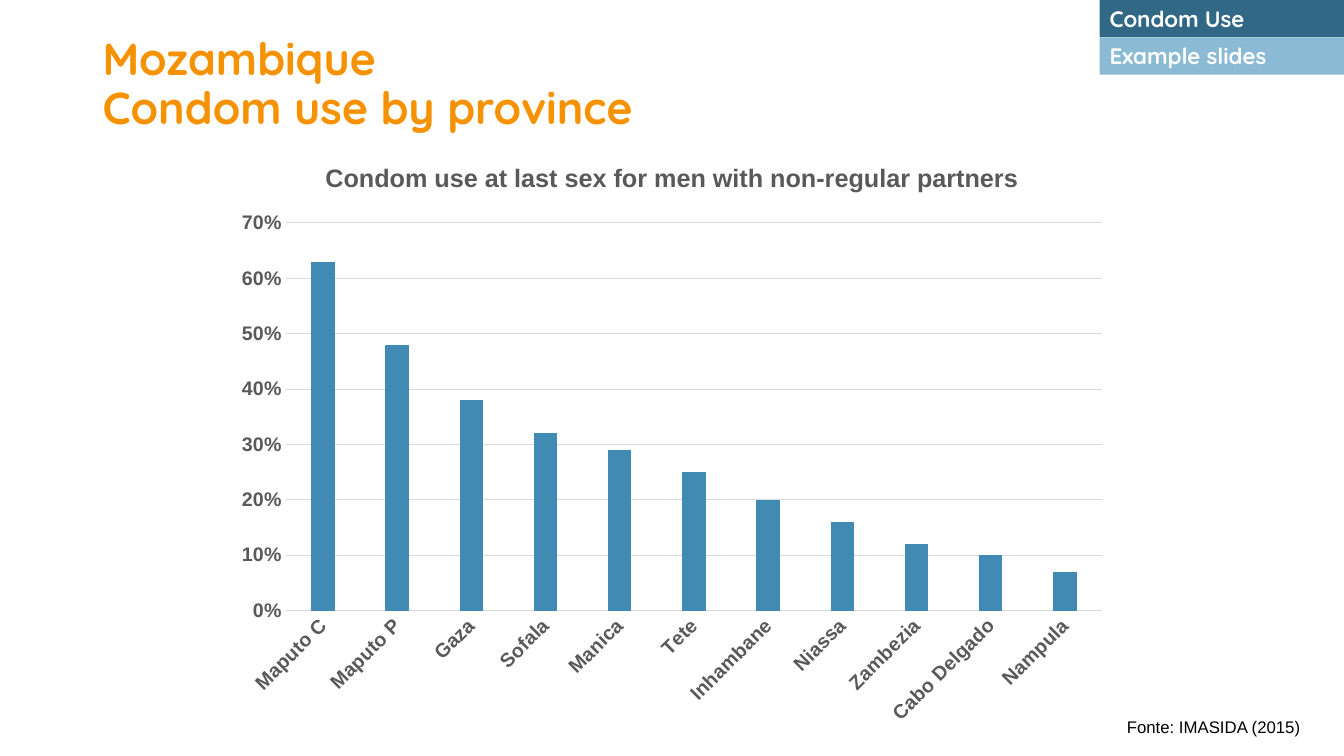
from pptx import Presentation
from pptx.chart.data import CategoryChartData
from pptx.dml.color import RGBColor
from pptx.enum.chart import XL_CHART_TYPE, XL_TICK_MARK
from pptx.enum.shapes import MSO_SHAPE
from pptx.enum.text import MSO_ANCHOR, PP_ALIGN
from pptx.util import Pt

COLUMNS = XL_CHART_TYPE.COLUMN_CLUSTERED
NO_TICK = XL_TICK_MARK.NONE
RECTANGLE = MSO_SHAPE.RECTANGLE
MIDDLE = MSO_ANCHOR.MIDDLE
TOP = MSO_ANCHOR.TOP
LEFT = PP_ALIGN.LEFT

CONDOM_USE = {
    "Maputo C": 0.63, "Maputo P": 0.48, "Gaza": 0.38, "Sofala": 0.32,
    "Manica": 0.29, "Tete": 0.25, "Inhambane": 0.2, "Niassa": 0.16,
    "Zambezia": 0.12, "Cabo Delgado": 0.1, "Nampula": 0.07,
}


def color(value):
    return RGBColor.from_string(value)


class ProvinceSlide:
    heading_font = "Quicksand"
    body_font = "Arial"
    orange = "F69200"
    bar_blue = "418AB3"
    gray = "595959"
    grid_gray = "D9D9D9"

    def __init__(self, deck):
        self.page = deck.slides.add_slide(deck.slide_layouts[6])

    def style_font(self, font, name, size, fill, bold=False):
        font.name = name
        font.size = Pt(size)
        font.bold = bold
        font.color.rgb = color(fill)

    def add_lines(self, frame, lines, name, size, fill, bold, spacing=1.0):
        for index, line in enumerate(lines):
            para = frame.add_paragraph() if index else frame.paragraphs[0]
            para.alignment = LEFT
            para.line_spacing = spacing
            span = para.add_run()
            span.text = line
            self.style_font(span.font, name, size, fill, bold)

    def title(self, lines, left, top, width, height):
        box = self.page.shapes.add_textbox(Pt(left), Pt(top), Pt(width), Pt(height))
        box.text_frame.word_wrap = True
        box.text_frame.vertical_anchor = MIDDLE
        self.add_lines(box.text_frame, lines, self.heading_font, 32, self.orange, True, 0.9)

    def source_note(self, text, left, top, width, height):
        box = self.page.shapes.add_textbox(Pt(left), Pt(top), Pt(width), Pt(height))
        box.text_frame.word_wrap = False
        box.text_frame.vertical_anchor = TOP
        self.add_lines(box.text_frame, [text], self.body_font, 12, "000000", False)

    def tag(self, text, fill, left, top, width, height):
        box = self.page.shapes.add_shape(RECTANGLE, Pt(left), Pt(top), Pt(width), Pt(height))
        box.shadow.inherit = False
        box.fill.solid()
        box.fill.fore_color.rgb = color(fill)
        box.line.fill.background()
        box.text_frame.word_wrap = True
        box.text_frame.vertical_anchor = MIDDLE
        self.add_lines(box.text_frame, [text], self.heading_font, 16, "FFFFFF", True)

    def thin_line(self, line):
        line.color.rgb = color(self.grid_gray)
        line.width = Pt(0.75)

    def column_chart(self, heading, values, left, top, width, height):
        data = CategoryChartData(number_format="0%")
        data.categories = list(values)
        data.add_series("Series 1", list(values.values()))
        chart = self.page.shapes.add_chart(
            COLUMNS, Pt(left), Pt(top), Pt(width), Pt(height), data).chart
        self.style_font(chart.font, self.body_font, 10, "000000")
        chart.has_legend = False

        # Chart heading
        chart.has_title = True
        chart.chart_title.include_in_layout = False
        span = chart.chart_title.text_frame.paragraphs[0].add_run()
        span.text = heading
        self.style_font(span.font, self.body_font, 18, self.gray, True)

        # Columns
        plot = chart.plots[0]
        plot.vary_by_categories = False
        plot.gap_width = 219
        plot.overlap = -27
        bars = plot.series[0].format
        bars.fill.solid()
        bars.fill.fore_color.rgb = color(self.bar_blue)

        # Axes
        for axis in (chart.category_axis, chart.value_axis):
            axis.major_tick_mark = NO_TICK
            axis.minor_tick_mark = NO_TICK
            self.style_font(axis.tick_labels.font, self.body_font, 14, self.gray, True)
        self.thin_line(chart.category_axis.format.line)
        labels = chart.category_axis._element.txPr
        labels.find("{*}bodyPr").set("rot", "-2700000")
        scale = chart.value_axis
        scale.minimum_scale, scale.maximum_scale, scale.major_unit = 0, 0.7, 0.1
        scale.tick_labels.number_format = "0%"
        scale.tick_labels.number_format_is_linked = False
        scale.format.line.fill.background()
        scale.has_major_gridlines = True
        self.thin_line(scale.major_gridlines.format.line)


def main():
    deck = Presentation()
    deck.slide_width, deck.slide_height = Pt(960), Pt(540)
    slide = ProvinceSlide(deck)

    # Chart and its source
    slide.column_chart("Condom use at last sex for men with non-regular partners",
                       CONDOM_USE, 160, 99.4, 640, 427)
    slide.source_note("Fonte: IMASIDA (2015)", 797.8, 508.3, 139.7, 21.6)

    # Title
    slide.title(["Mozambique", "Condom use by province"], 66.2, 23, 828, 76.3)

    # Corner tags
    tag_height = 26.64
    tags = [("Condom Use", "316886"), ("Example slides", "8ABAD4")]
    for row, (text, fill) in enumerate(tags):
        slide.tag(text, fill, 785.5, row * tag_height, 174.5, tag_height)

    deck.save("out.pptx")


if __name__ == "__main__":
    main()
